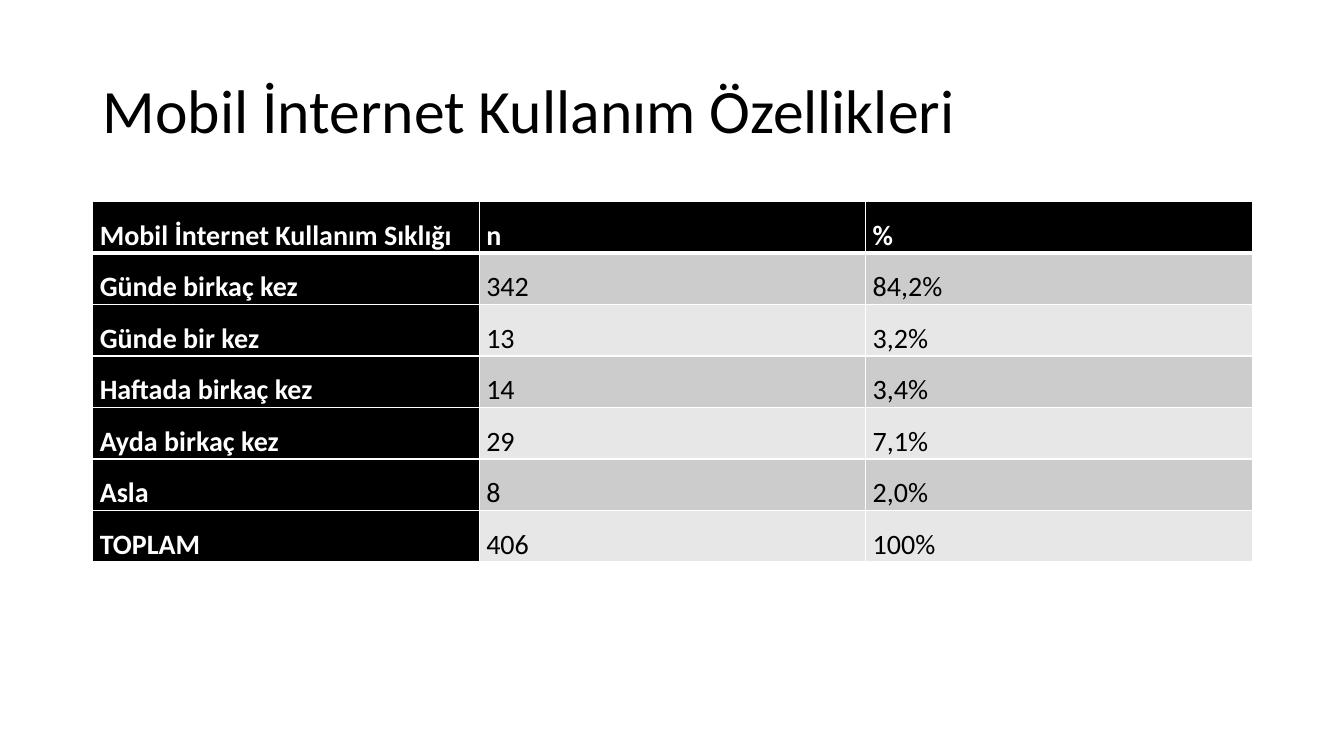
from lxml.etree import SubElement
from pptx import Presentation
from pptx.dml.color import RGBColor
from pptx.enum.text import MSO_ANCHOR, PP_ALIGN
from pptx.oxml.ns import qn
from pptx.util import Inches, Pt


def style_run(run, size, color, bold=False):
    run.font.name = "Calibri"
    run.font.size = Pt(size)
    run.font.bold = bold
    run.font.color.rgb = RGBColor.from_string(color)


def add_border(cell, side, points):
    line = SubElement(cell._tc.get_or_add_tcPr(), qn(f"a:ln{side}"), w=str(Pt(points)))
    fill = SubElement(line, qn("a:solidFill"))
    SubElement(fill, qn("a:srgbClr"), val="FFFFFF")


prs = Presentation()
prs.slide_width = Inches(13.33)
prs.slide_height = Inches(7.5)
slide = prs.slides.add_slide(prs.slide_layouts[6])

usage_rows = [
    ("Mobil İnternet Kullanım Sıklığı", "n", "%"),
    ("Günde birkaç kez", "342", "84,2%"),
    ("Günde bir kez", "13", "3,2%"),
    ("Haftada birkaç kez", "14", "3,4%"),
    ("Ayda birkaç kez", "29", "7,1%"),
    ("Asla", "8", "2,0%"),
    ("TOPLAM", "406", "100%"),
]
row_height = Inches(0.51)
usage = slide.shapes.add_table(
    len(usage_rows), 3, Inches(0.92), Inches(2), Inches(11.5), row_height * len(usage_rows)
).table

for r, values in enumerate(usage_rows):
    usage.rows[r].height = row_height
    for c, value in enumerate(values):
        cell = usage.cell(r, c)
        is_heading = r == 0 or c == 0
        for side in "LRTB":
            under_header = (r, side) in ((0, "B"), (1, "T"))
            add_border(cell, side, 3 if under_header else 1)
        band = "CCCCCC" if r % 2 else "E7E7E7"
        cell.fill.solid()
        cell.fill.fore_color.rgb = RGBColor.from_string("000000" if is_heading else band)
        cell.margin_left = cell.margin_right = Inches(0.07)
        cell.margin_top = cell.margin_bottom = 0
        cell.vertical_anchor = MSO_ANCHOR.MIDDLE
        paragraph = cell.text_frame.paragraphs[0]
        paragraph.alignment = PP_ALIGN.JUSTIFY
        paragraph.line_spacing = 1.5
        run = paragraph.add_run()
        run.text = value
        style_run(run, 20, "FFFFFF" if is_heading else "000000", is_heading)

title = slide.shapes.add_textbox(Inches(0.92), Inches(0.4), Inches(11.5), Inches(1.45)).text_frame
title.word_wrap = True
title.vertical_anchor = MSO_ANCHOR.MIDDLE
title.paragraphs[0].line_spacing = 0.9
title_run = title.paragraphs[0].add_run()
title_run.text = "Mobil İnternet Kullanım Özellikleri"
style_run(title_run, 44, "000000")

prs.save("out.pptx")
